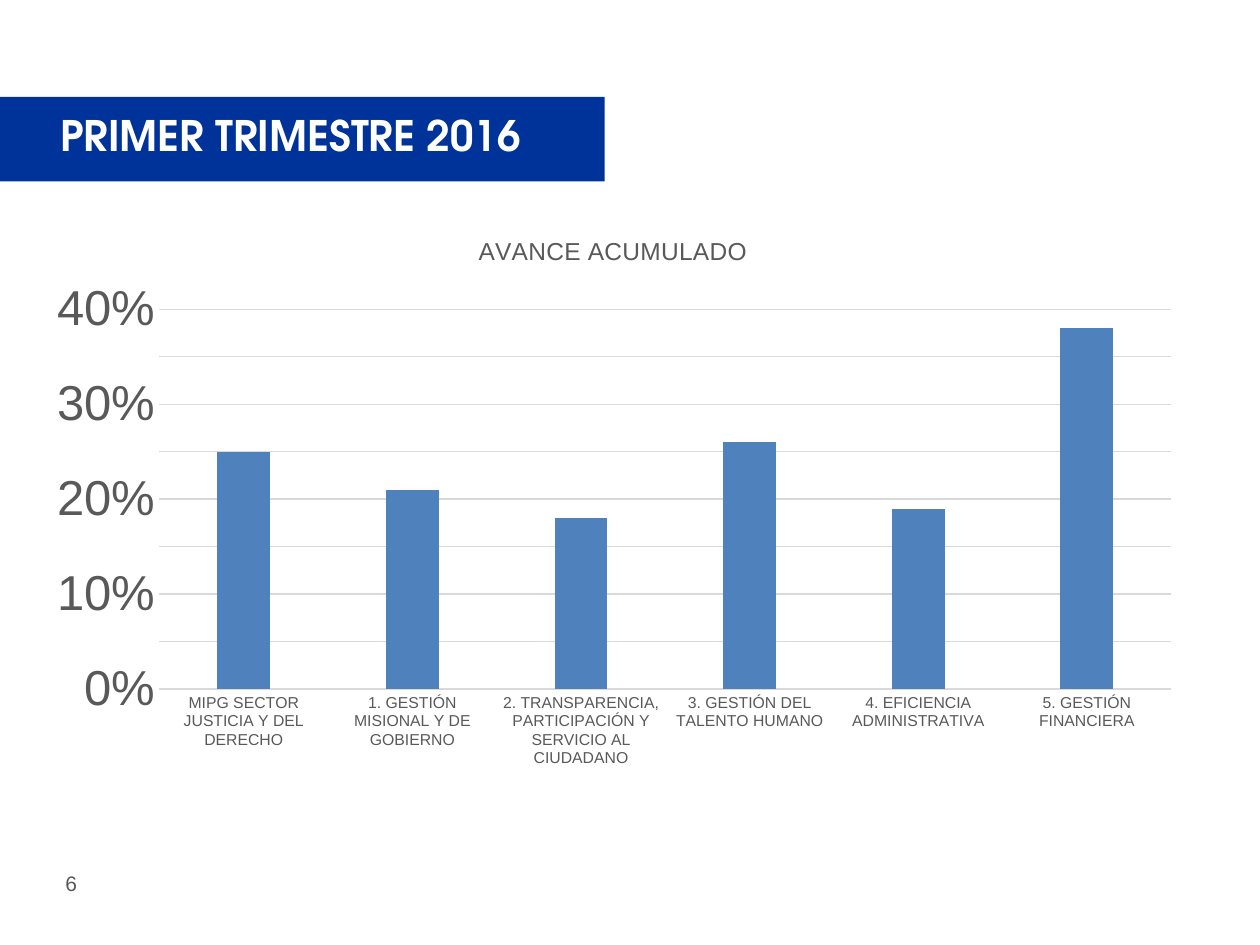
from lxml import etree
from pptx import Presentation
from pptx.chart.data import CategoryChartData
from pptx.dml.color import RGBColor
from pptx.enum.chart import XL_CHART_TYPE, XL_TICK_MARK
from pptx.enum.shapes import MSO_SHAPE
from pptx.enum.text import MSO_ANCHOR, PP_ALIGN
from pptx.oxml import parse_xml
from pptx.oxml.ns import nsdecls, qn
from pptx.util import Inches, Pt

COLUMNS = XL_CHART_TYPE.COLUMN_CLUSTERED
NO_TICK = XL_TICK_MARK.NONE
RECTANGLE = MSO_SHAPE.RECTANGLE
MIDDLE = MSO_ANCHOR.MIDDLE
LEFT, CENTER = PP_ALIGN.LEFT, PP_ALIGN.CENTER

NAVY = RGBColor(0x00, 0x33, 0x99)
WHITE = RGBColor(0xFF, 0xFF, 0xFF)
BLACK = RGBColor(0x00, 0x00, 0x00)
GRAY = RGBColor(0x59, 0x59, 0x59)
LIGHT_GRAY = RGBColor(0xD9, 0xD9, 0xD9)
BAR_BLUE = RGBColor(0x4F, 0x81, 0xBD)

CHART_TITLE = "AVANCE ACUMULADO"
PROGRESS = {
    "MIPG SECTOR JUSTICIA Y DEL DERECHO": 0.25,
    "1. GESTIÓN MISIONAL Y DE GOBIERNO": 0.21,
    "2. TRANSPARENCIA, PARTICIPACIÓN Y SERVICIO AL CIUDADANO": 0.18,
    "3. GESTIÓN DEL TALENTO HUMANO": 0.26,
    "4. EFICIENCIA ADMINISTRATIVA": 0.19,
    "5. GESTIÓN FINANCIERA": 0.38,
}
# Inner plot area, as fractions of the chart
PLOT_AREA = {"x": 0.11, "y": 0.17, "w": 0.87, "h": 0.67}


def style_font(font, size, color, name="Arial", bold=False):
    font.name = name
    font.size = Pt(size)
    font.bold = bold
    font.color.rgb = color


def style_line(line):
    line.color.rgb = LIGHT_GRAY
    line.width = Pt(0.75)


def add_band(slide, left, top, width, height):
    band = slide.shapes.add_shape(
        RECTANGLE, Inches(left), Inches(top), Inches(width), Inches(height))
    band.shadow.inherit = False
    band.fill.solid()
    band.fill.fore_color.rgb = NAVY
    band.line.fill.background()


def add_text(slide, text, left, top, width, height, alignment, **font_style):
    box = slide.shapes.add_textbox(
        Inches(left), Inches(top), Inches(width), Inches(height))
    frame = box.text_frame
    frame.word_wrap = True
    frame.vertical_anchor = MIDDLE
    paragraph = frame.paragraphs[0]
    paragraph.text = text
    paragraph.alignment = alignment
    style_font(paragraph.font, **font_style)


def place_plot_area(chart):
    plot_area = chart.element.find(".//" + qn("c:plotArea"))
    for old_layout in plot_area.findall(qn("c:layout")):
        plot_area.remove(old_layout)
    layout = parse_xml(
        f'<c:layout {nsdecls("c")}><c:manualLayout><c:layoutTarget val="inner"/>'
        '<c:xMode val="edge"/><c:yMode val="edge"/></c:manualLayout></c:layout>')
    for key, fraction in PLOT_AREA.items():
        etree.SubElement(layout[0], qn(f"c:{key}")).set("val", str(fraction))
    plot_area.insert(0, layout)


def add_progress_chart(slide, left, top, width, height):
    data = CategoryChartData(number_format="0%")
    data.categories = list(PROGRESS)
    data.add_series(CHART_TITLE, list(PROGRESS.values()))
    chart = slide.shapes.add_chart(
        COLUMNS, Inches(left), Inches(top), Inches(width), Inches(height),
        data).chart
    style_font(chart.font, 10, BLACK)
    chart.has_legend = False

    # Title
    chart.has_title = True
    title = chart.chart_title
    title.include_in_layout = False
    paragraph = title.text_frame.paragraphs[0]
    paragraph.text = CHART_TITLE
    style_font(paragraph.font, 14, GRAY)

    # Columns
    plot = chart.plots[0]
    plot.vary_by_categories = False
    plot.gap_width = 219
    plot.overlap = -27
    fill = plot.series[0].format.fill
    fill.solid()
    fill.fore_color.rgb = BAR_BLUE

    # Axes
    for axis, size in ((chart.category_axis, 9), (chart.value_axis, 28)):
        axis.major_tick_mark = NO_TICK
        axis.minor_tick_mark = NO_TICK
        style_font(axis.tick_labels.font, size, GRAY)
    style_line(chart.category_axis.format.line)
    value_axis = chart.value_axis
    value_axis.minimum_scale = 0
    value_axis.maximum_scale = 0.4
    value_axis.major_unit = 0.05
    value_axis.tick_labels.number_format = "0%"
    value_axis.tick_labels.number_format_is_linked = False
    value_axis.format.line.fill.background()
    style_line(value_axis.major_gridlines.format.line)
    place_plot_area(chart)


def main():
    presentation = Presentation()
    presentation.slide_width = Inches(10)
    presentation.slide_height = Inches(7.5)
    slide = presentation.slides.add_slide(presentation.slide_layouts[6])

    # Page number
    add_text(slide, "6", 0.42, 6.86, 0.75, 0.3, LEFT, size=12, color=GRAY)

    # Heading on its band
    add_band(slide, 0, 0.77, 4.8, 0.67)
    add_text(slide, "PRIMER TRIMESTRE 2016", 0.25, 0.83, 4.11, 0.48, CENTER,
             size=24, color=WHITE, name="TeX Gyre Adventor", bold=True)

    # Progress by area
    add_progress_chart(slide, 0.25, 1.69, 9.23, 4.5)

    presentation.save("out.pptx")


if __name__ == "__main__":
    main()
